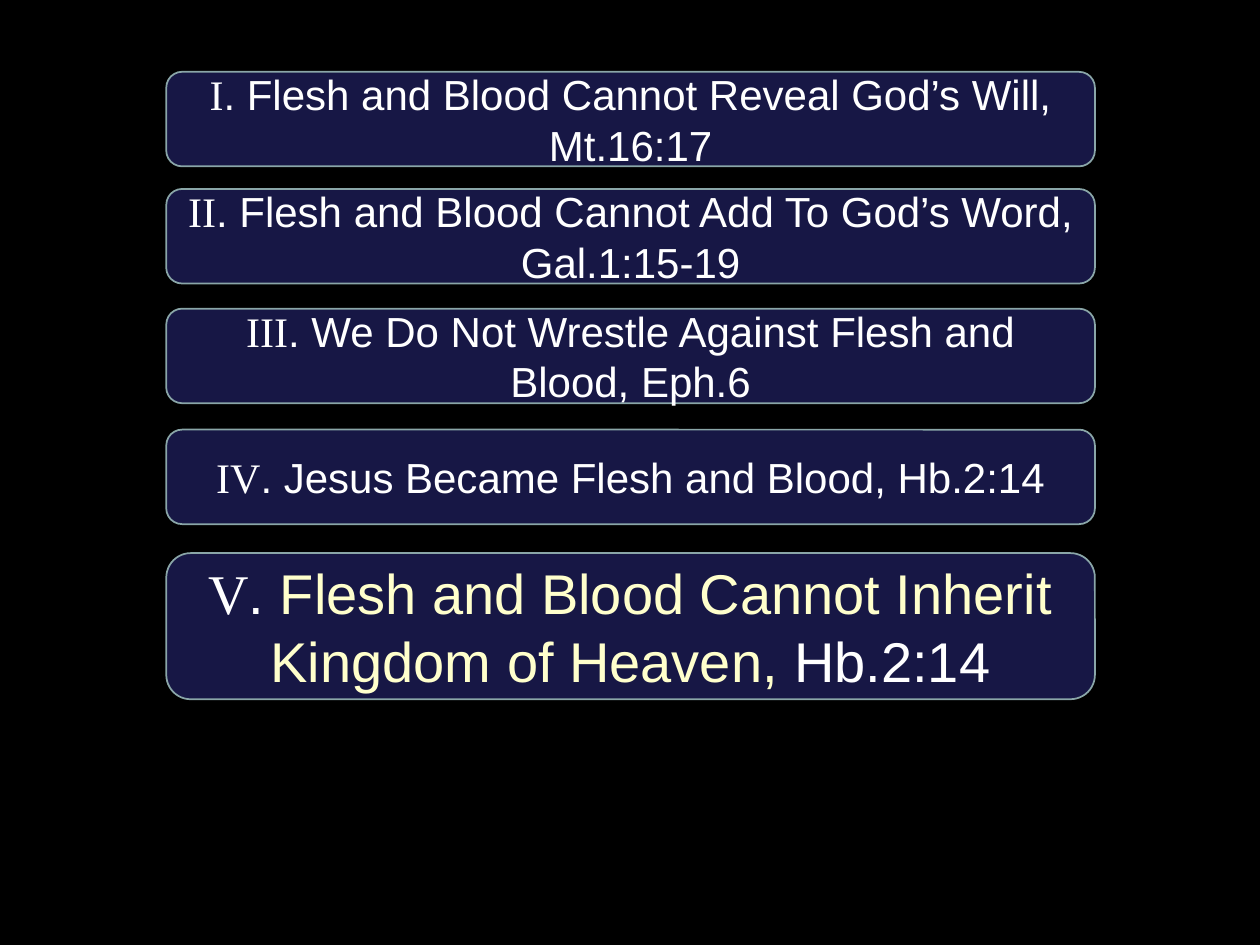
from pptx import Presentation
from pptx.dml.color import RGBColor
from pptx.enum.shapes import MSO_SHAPE
from pptx.enum.text import MSO_ANCHOR, PP_ALIGN
from pptx.util import Pt

ROUNDED = MSO_SHAPE.ROUNDED_RECTANGLE
MIDDLE = MSO_ANCHOR.MIDDLE
CENTER = PP_ALIGN.CENTER

COLORS = {
    "background": "000000",
    "box": "171745",
    "border": "8AA6A8",
    "text": "FFFFFF",
    "highlight": "FFFFCC",
}
NUMERAL_FONT, BODY_FONT = "Times New Roman", "Arial"

# Points of the outline: top, height, text size, numeral, (text, colour) runs
POINTS = [
    (41.04, 54, 24, "I",
     [(". Flesh and Blood Cannot Reveal God’s Will, Mt.16:17", "text")]),
    (108, 54, 24, "II",
     [(". Flesh and Blood Cannot Add To God’s Word, Gal.1:15-19", "text")]),
    (176.4, 54, 24, "III",
     [(". We Do Not Wrestle Against Flesh and Blood, Eph.6", "text")]),
    (245.5, 54, 24, "IV",
     [(". Jesus Became Flesh and Blood, Hb.2:14", "text")]),
    (316.08, 83.5, 32, "V",
     [(". ", "text"),
      ("Flesh and Blood Cannot Inherit Kingdom of Heaven, ", "highlight"),
      ("Hb.2:14", "text")]),
]
BOX_LEFT, BOX_WIDTH = 95.04, 530.64


def rgb(name):
    return RGBColor.from_string(COLORS[name])


def add_run(p, text, font, size, color):
    r = p.add_run()
    r.text = text
    for key, value in {"name": font, "size": Pt(size)}.items():
        setattr(r.font, key, value)
    r.font.color.rgb = rgb(color)


def add_point(s, top, height, size, numeral, runs):
    sp = s.shapes.add_shape(ROUNDED, Pt(BOX_LEFT), Pt(top), Pt(BOX_WIDTH), Pt(height))
    sp.shadow.inherit = False
    sp.fill.solid()
    sp.fill.fore_color.rgb = rgb("box")
    sp.line.color.rgb = rgb("border")
    sp.line.width = Pt(1)

    tf = sp.text_frame
    for key, value in {"word_wrap": True, "vertical_anchor": MIDDLE}.items():
        setattr(tf, key, value)
    p = tf.paragraphs[0]
    p.alignment = CENTER
    add_run(p, numeral, NUMERAL_FONT, size, "text")
    for text, color in runs:
        add_run(p, text, BODY_FONT, size, color)


def main():
    prs = Presentation()
    prs.slide_width, prs.slide_height = Pt(720), Pt(540)
    s = prs.slides.add_slide(prs.slide_layouts[6])

    # Background
    s.background.fill.solid()
    s.background.fill.fore_color.rgb = rgb("background")

    # Outline boxes
    for point in POINTS:
        add_point(s, *point)

    prs.save("out.pptx")


if __name__ == "__main__":
    main()
